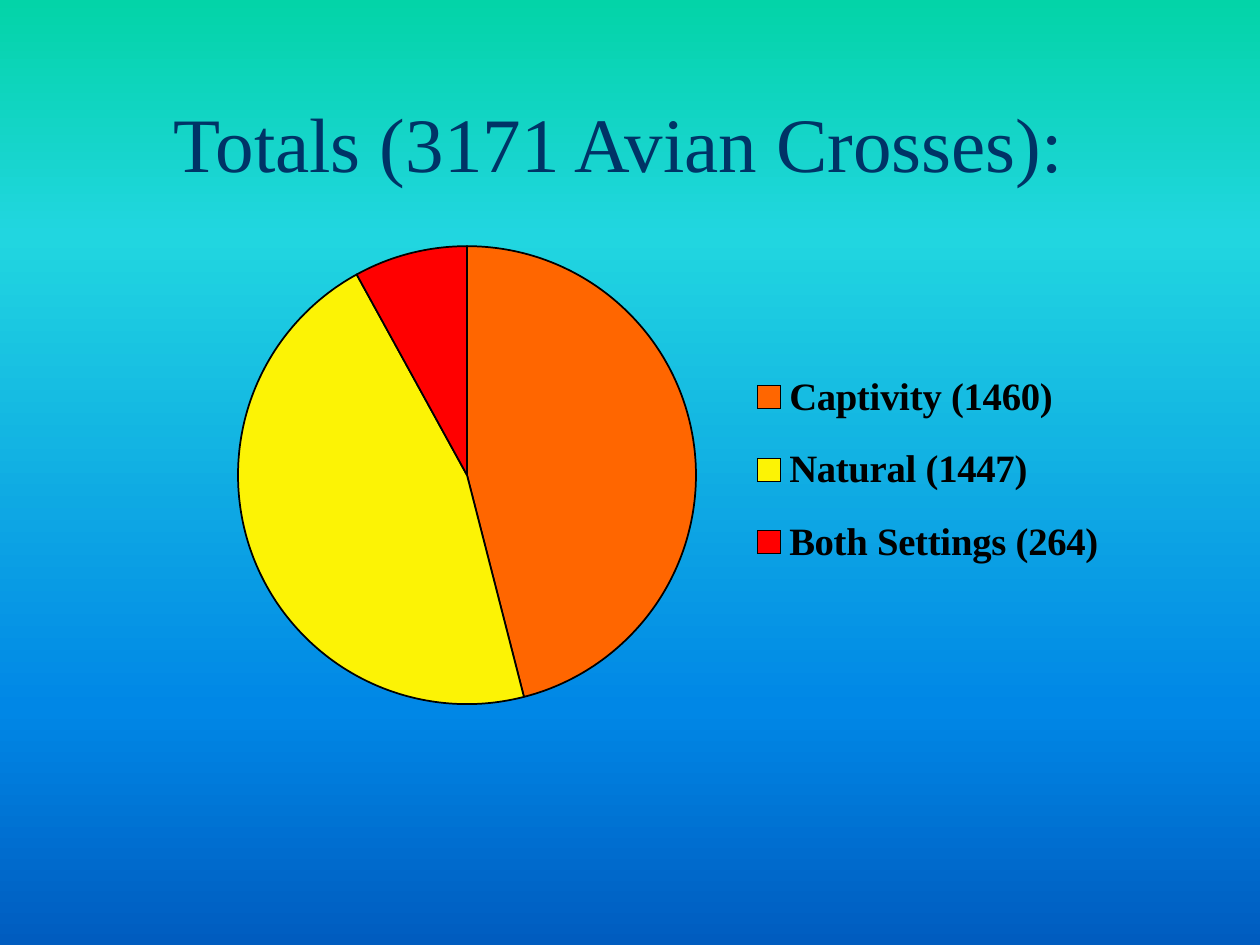
import copy

import lxml.etree
import pptx
import pptx.chart.data
import pptx.dml.color
import pptx.enum.chart
import pptx.enum.text
import pptx.oxml.ns
import pptx.util

Inches = pptx.util.Inches
qn = pptx.oxml.ns.qn


def color(value):
    return pptx.dml.color.RGBColor.from_string(value)


class SlideBuilder:
    font_name = "Times New Roman"
    title_color = "003366"
    ink = "000000"

    def __init__(self, slide):
        self.slide = slide

    def background(self, stops):
        fill = self.slide.background.fill
        fill.gradient()
        fill.gradient_angle = 270
        stop_list = next(self.slide.element.iter(qn("a:gsLst")))
        while len(stop_list) < len(stops):
            stop_list.append(copy.deepcopy(stop_list[0]))
        for stop, (position, value) in zip(fill.gradient_stops, stops):
            stop.position = position
            stop.color.rgb = color(value)

    def style_font(self, font, size, value, bold):
        font.name = self.font_name
        font.size = pptx.util.Pt(size)
        font.bold = bold
        font.color.rgb = color(value)

    def place(self, shape, left, top, width, height):
        shape.left, shape.top = Inches(left), Inches(top)
        shape.width, shape.height = Inches(width), Inches(height)

    def title(self, text, bounds):
        box = self.slide.shapes.title
        self.place(box, *bounds)
        frame = box.text_frame
        frame.word_wrap = True
        frame.vertical_anchor = pptx.enum.text.MSO_ANCHOR.MIDDLE
        para = frame.paragraphs[0]
        para.alignment = pptx.enum.text.PP_ALIGN.LEFT
        span = para.add_run()
        span.text = text
        self.style_font(span.font, 44, self.title_color, False)

    def layout(self, parent, index, bounds, inner=False):
        for old in parent.findall(qn("c:layout")):
            parent.remove(old)
        layout = lxml.etree.Element(qn("c:layout"))
        manual = lxml.etree.SubElement(layout, qn("c:manualLayout"))
        settings = [("layoutTarget", "inner")] if inner else []
        settings += [("xMode", "edge"), ("yMode", "edge")]
        settings += zip("xywh", bounds)
        for name, value in settings:
            lxml.etree.SubElement(manual, qn(f"c:{name}")).set("val", str(value))
        parent.insert(index, layout)

    def pie(self, slices, bounds, plot_bounds, legend_bounds):
        data = pptx.chart.data.CategoryChartData()
        data.categories = [label for label, _, _ in slices]
        data.add_series("Series 1", [share for _, share, _ in slices])
        chart = self.slide.shapes.add_chart(
            pptx.enum.chart.XL_CHART_TYPE.PIE, *map(Inches, bounds), data
        ).chart
        chart.has_title = False
        self.style_font(chart.font, 18.2, self.ink, True)

        plot = chart.plots[0]
        plot.vary_by_categories = True
        for index, (_, _, value) in enumerate(slices):
            style = plot.series[0].points[index].format
            style.fill.solid()
            style.fill.fore_color.rgb = color(value)
            style.line.color.rgb = color(self.ink)
            style.line.width = pptx.util.Pt(1)

        chart.has_legend = True
        legend = chart.legend
        legend.position = pptx.enum.chart.XL_LEGEND_POSITION.RIGHT
        legend.include_in_layout = False
        self.style_font(legend.font, 22.1, self.ink, True)

        root = chart.element
        self.layout(next(root.iter(qn("c:plotArea"))), 0, plot_bounds, True)
        self.layout(next(root.iter(qn("c:legend"))), 1, legend_bounds)


def main():
    deck = pptx.Presentation()
    deck.slide_width, deck.slide_height = Inches(10), Inches(7.5)
    page = SlideBuilder(deck.slides.add_slide(deck.slide_layouts[5]))
    page.background(
        [(0, "03D4A8"), (0.25, "21D6E0"), (0.75, "0087E6"), (1, "005CBF")]
    )
    page.title("Totals (3171 Avian Crosses):", (1.28, 0.5, 8.5, 1.25))
    page.pie(
        [
            ("Captivity (1460)", 46, "FF6600"),
            ("Natural (1447)", 46, "FCF305"),
            ("Both Settings (264)", 8, "FF0000"),
        ],
        bounds=(0.31, 1.56, 8.71, 4.38),
        plot_bounds=(0.18, 0.09, 0.42, 0.83),
        legend_bounds=(0.64, 0.27, 0.34, 0.45),
    )
    deck.save("out.pptx")


if __name__ == "__main__":
    main()
